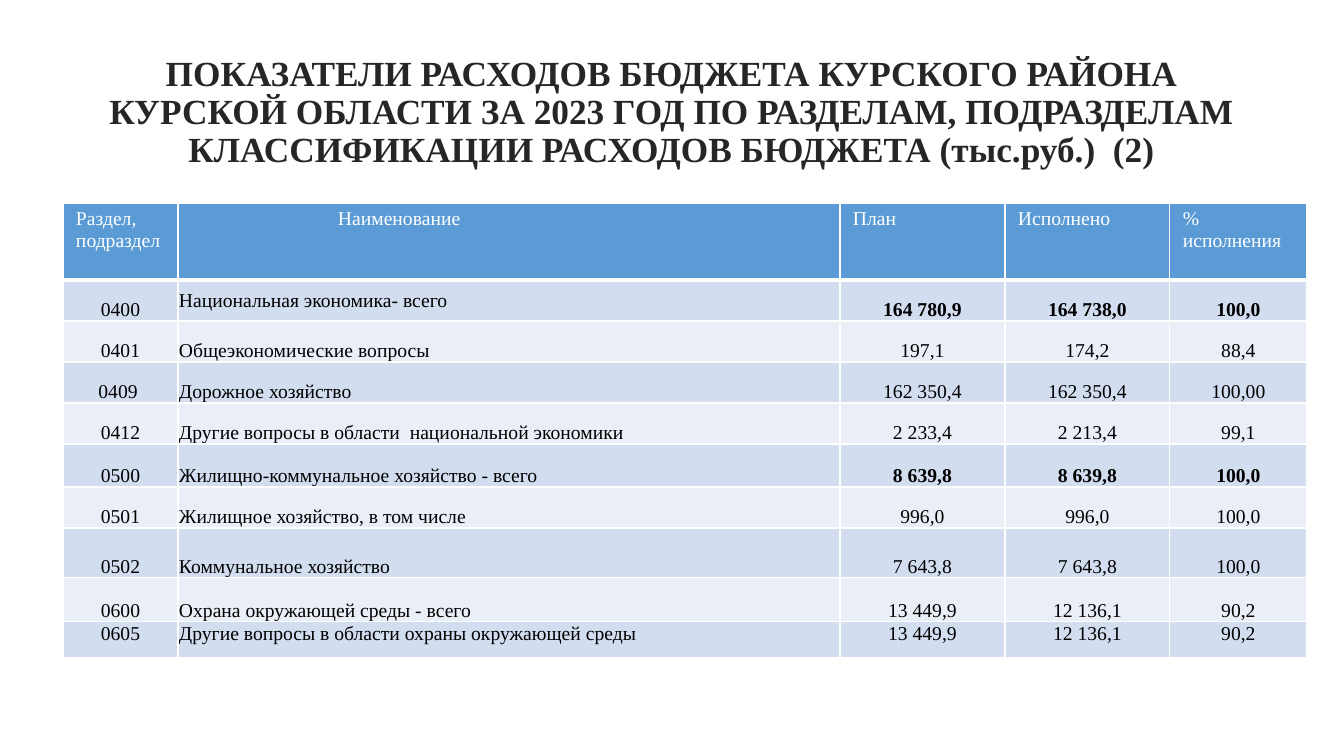
"""Build the slide with the district budget expenditure table."""
from lxml.etree import SubElement
from pptx import Presentation
from pptx.dml.color import RGBColor
from pptx.enum.text import MSO_ANCHOR as Anchor, PP_ALIGN as Align
from pptx.oxml.ns import qn
from pptx.util import Emu, Pt

TITLE = ("ПОКАЗАТЕЛИ РАСХОДОВ БЮДЖЕТА КУРСКОГО РАЙОНА КУРСКОЙ ОБЛАСТИ ЗА 2023 ГОД "
         "ПО РАЗДЕЛАМ, ПОДРАЗДЕЛАМ КЛАССИФИКАЦИИ РАСХОДОВ БЮДЖЕТА (тыс.руб.)  (2)")
HEADERS = ["Раздел, подраздел", "Наименование", "План", "Исполнено", "%\nисполнения"]
EXPENSES = [
    ("0400", "Национальная экономика- всего", "164 780,9", "164 738,0", "100,0"),
    ("0401", "Общеэкономические вопросы", "197,1", "174,2", "88,4"),
    ("0409 ", "Дорожное хозяйство", "162 350,4", "162 350,4", "100,00"),
    ("0412", "Другие вопросы в области  национальной экономики", "2 233,4", "2 213,4", "99,1"),
    ("0500", "Жилищно-коммунальное хозяйство - всего", "8 639,8", "8 639,8", "100,0"),
    ("0501", "Жилищное хозяйство, в том числе", "996,0", "996,0", "100,0"),
    ("0502", "Коммунальное хозяйство", "7 643,8", "7 643,8", "100,0"),
    ("0600", "Охрана окружающей среды - всего", "13 449,9", "12 136,1", "90,2"),
    ("0605", "Другие вопросы в области охраны окружающей среды", "13 449,9", "12 136,1", "90,2"),
]
BOLD_SECTIONS = {"0400", "0500"}
COLUMN_WIDTHS = [115, 662, 165, 165, 137]
ROW_HEIGHTS = [77, 41, 41, 41, 41, 43, 41, 50, 44, 36]
NAME_COLUMN = 1
NAME_HEADER_INDENT = 160

FONT = "Times New Roman"
WHITE = RGBColor(0xFF, 0xFF, 0xFF)
BLACK = RGBColor(0, 0, 0)
CHARCOAL = RGBColor(0x26, 0x26, 0x26)
HEADER_BLUE = RGBColor(0x5B, 0x9B, 0xD5)
BANDS = [RGBColor(0xD2, 0xDE, 0xEF), RGBColor(0xEA, 0xEF, 0xF7)]


def px(length):
    return Emu(round(length * 914400 / 100.8))


def write(frame, text, size=14, color=BLACK, bold=False, align=Align.LEFT, spacing=None):
    frame.word_wrap = True
    for index, line in enumerate(text.split("\n")):
        para = frame.add_paragraph() if index else frame.paragraphs[0]
        para.alignment = align
        para.line_spacing = spacing
        span = para.add_run()
        span.text = line
        span.font.name = FONT
        span.font.size = Pt(size)
        span.font.bold = bold
        span.font.color.rgb = color


def set_cell(cell, fill, margins, anchor, bottom_width=1):
    cell.margin_left, cell.margin_top, cell.margin_right, cell.margin_bottom = map(px, margins)
    cell.vertical_anchor = anchor
    properties = cell._tc.get_or_add_tcPr()
    for side, width in (("L", 1), ("R", 1), ("T", 1), ("B", bottom_width)):
        line = SubElement(properties, qn(f"a:ln{side}"), w=str(Pt(width)))
        SubElement(SubElement(line, qn("a:solidFill")), qn("a:srgbClr"), val=str(WHITE))
    cell.fill.solid()
    cell.fill.fore_color.rgb = fill


def add_title(page):
    box = page.shapes.add_textbox(px(92), px(40), px(1159), px(146))
    box.text_frame.vertical_anchor = Anchor.MIDDLE
    write(box.text_frame, TITLE, size=25.2, color=CHARCOAL, bold=True,
          align=Align.CENTER, spacing=0.9)


def add_expense_table(page):
    table = page.shapes.add_table(
        len(ROW_HEIGHTS), len(COLUMN_WIDTHS), px(63), px(203),
        px(sum(COLUMN_WIDTHS)), px(sum(ROW_HEIGHTS))).table
    for column, width in zip(table.columns, COLUMN_WIDTHS):
        column.width = px(width)
    for row, height in zip(table.rows, ROW_HEIGHTS):
        row.height = px(height)

    for column, text in enumerate(HEADERS):
        cell = table.cell(0, column)
        left = NAME_HEADER_INDENT if column == NAME_COLUMN else 13
        set_cell(cell, HEADER_BLUE, (left, 5, 13, 5), Anchor.TOP, bottom_width=3)
        write(cell.text_frame, text, color=WHITE)

    for row, expense in enumerate(EXPENSES, start=1):
        for column, text in enumerate(expense):
            is_name = column == NAME_COLUMN
            anchor = Anchor.TOP if row == len(EXPENSES) else Anchor.BOTTOM
            if row == 1 and is_name:
                anchor = Anchor.MIDDLE
            cell = table.cell(row, column)
            set_cell(cell, BANDS[(row - 1) % 2], (1, 1, 1, 0), anchor)
            write(cell.text_frame, text,
                  bold=expense[0] in BOLD_SECTIONS and column > NAME_COLUMN,
                  align=Align.LEFT if is_name else Align.CENTER)


def main():
    deck = Presentation()
    deck.slide_width, deck.slide_height = px(1344), px(756)
    page = deck.slides.add_slide(deck.slide_layouts[6])
    add_title(page)
    add_expense_table(page)
    deck.save("out.pptx")


if __name__ == "__main__":
    main()
